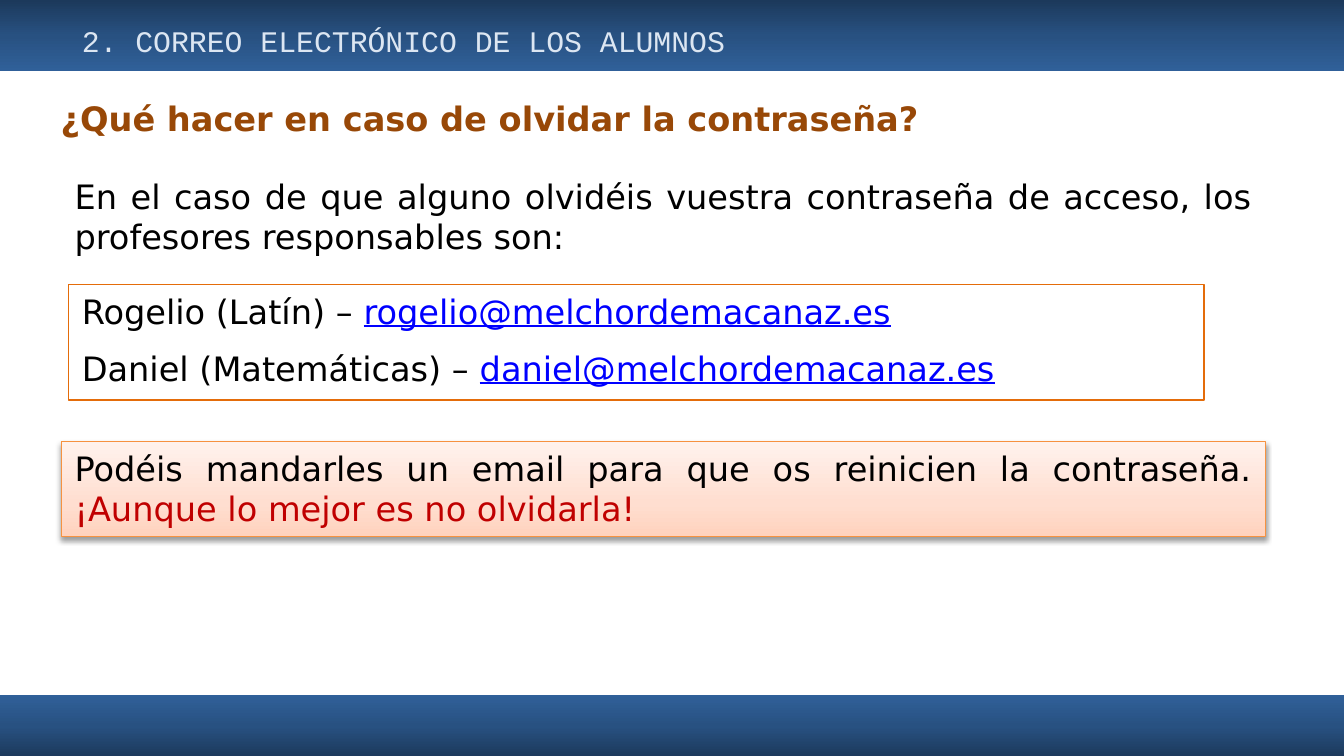
from lxml import etree
from pptx import Presentation
from pptx.dml.color import RGBColor
from pptx.enum.shapes import MSO_SHAPE
from pptx.enum.text import MSO_ANCHOR, PP_ALIGN
from pptx.oxml.ns import qn
from pptx.util import Pt

RECTANGLE = MSO_SHAPE.RECTANGLE
TOP = MSO_ANCHOR.TOP
LEFT, JUSTIFY = PP_ALIGN.LEFT, PP_ALIGN.JUSTIFY

THEME = {
    "band": [(0, "1C395B"), (50, "285181"), (100, "306099")],
    "callout": [(0, "FFD2BD"), (35, "FFDED0"), (100, "FFF2ED")],
    "callout_line": "F69240",
    "contacts_line": "E46C0A",
    "shadow": "000000",
    "paragraph_gap": 9,
    # style: font, size, colour, bold, underline
    "section": ("Courier New", 16, "DCE6F2", False, False),
    "question": ("DejaVu Sans", 18, "984807", True, False),
    "body": ("DejaVu Sans", 18, "000000", False, False),
    "email": ("DejaVu Sans", 18, "0000FF", False, True),
    "warning": ("DejaVu Sans", 18, "C00000", False, False),
}

# Each text is a list of paragraphs; each paragraph is a list of (wording, style).
SECTION = [[("2. CORREO ELECTRÓNICO DE LOS ALUMNOS", "section")]]
QUESTION = [[("¿Qué hacer en caso de olvidar la contraseña?", "question")]]
INTRO = [[("En el caso de que alguno olvidéis vuestra contraseña de acceso, "
           "los profesores responsables son:", "body")]]
TEACHERS = [
    ("Rogelio (Latín)", "rogelio@melchordemacanaz.es"),
    ("Daniel (Matemáticas)", "daniel@melchordemacanaz.es"),
]
CONTACTS = [[(f"{teacher} – ", "body"), (email, "email")] for teacher, email in TEACHERS]
ADVICE = [[("Podéis mandarles un email para que os reinicien la contraseña. ", "body"),
           ("¡Aunque lo mejor es no olvidarla!", "warning")]]

# Left, top, width, height in points
HEADER_BAND = (0, 0, 720, 38.16)
FOOTER_BAND = (0, 372.24, 720, 33.5)
SECTION_BOX = (36.72, 8.64, 360.72, 26.64)
QUESTION_BOX = (25.4, 48.96, 480.24, 29)
INTRO_BOX = (32.9, 90.72, 645.12, 51.12)
CONTACTS_BOX = (36.72, 152.4, 608.4, 61.92)
ADVICE_BOX = (32.9, 236.4, 645.12, 51.12)


def write(frame, paragraphs, align=LEFT, wrap=True):
    frame.word_wrap = wrap
    frame.vertical_anchor = TOP
    for index, runs in enumerate(paragraphs):
        paragraph = frame.add_paragraph() if index else frame.paragraphs[0]
        paragraph.alignment = align
        if index:
            paragraph.space_before = Pt(THEME["paragraph_gap"])
        for wording, style in runs:
            run = paragraph.add_run()
            run.text = wording
            name, size, colour, bold, underline = THEME[style]
            run.font.name, run.font.size = name, Pt(size)
            run.font.bold, run.font.underline = bold, underline
            run.font.color.rgb = RGBColor.from_string(colour)


def add_text(slide, box, paragraphs, **layout):
    write(slide.shapes.add_textbox(*map(Pt, box)).text_frame, paragraphs, **layout)


def add_panel(slide, box, line=None):
    panel = slide.shapes.add_shape(RECTANGLE, *map(Pt, box))
    panel.shadow.inherit = False
    panel.fill.background()
    if line:
        panel.line.color.rgb = RGBColor.from_string(line)
        panel.line.width = Pt(0.75)
    else:
        panel.line.fill.background()
    return panel


def set_gradient(panel, stops, angle):
    """Fill with any number of (percent, colour) stops; angle is counter-clockwise."""
    panel.fill.gradient()
    panel.fill.gradient_angle = angle
    stop_list = panel.fill._fill._gradFill.find(qn("a:gsLst"))
    stop_list.clear()
    for percent, colour in stops:
        stop = etree.SubElement(stop_list, qn("a:gs"), pos=str(percent * 1000))
        etree.SubElement(stop, qn("a:srgbClr"), val=colour)


def add_shadow(panel, colour, opacity, blur, distance):
    """Drop a shadow straight down."""
    effects = panel._element.spPr.find(qn("a:effectLst"))
    shadow = etree.SubElement(effects, qn("a:outerShdw"), blurRad=str(Pt(blur)),
                              dist=str(Pt(distance)), dir="5400000", rotWithShape="0")
    tint = etree.SubElement(shadow, qn("a:srgbClr"), val=colour)
    etree.SubElement(tint, qn("a:alpha"), val=str(opacity * 1000))


def main():
    deck = Presentation()
    deck.slide_width, deck.slide_height = Pt(720), Pt(405)
    slide = deck.slides.add_slide(deck.slide_layouts[6])

    for box, angle in ((HEADER_BAND, 270), (FOOTER_BAND, 90)):
        set_gradient(add_panel(slide, box), THEME["band"], angle)

    add_text(slide, SECTION_BOX, SECTION, wrap=False)
    add_text(slide, QUESTION_BOX, QUESTION)
    add_text(slide, INTRO_BOX, INTRO, align=JUSTIFY)

    contacts = add_panel(slide, CONTACTS_BOX, THEME["contacts_line"])
    write(contacts.text_frame, CONTACTS, align=JUSTIFY)

    advice = add_panel(slide, ADVICE_BOX, THEME["callout_line"])
    set_gradient(advice, THEME["callout"], 90)
    add_shadow(advice, THEME["shadow"], opacity=38, blur=3.1, distance=1.6)
    write(advice.text_frame, ADVICE, align=JUSTIFY)

    deck.save("out.pptx")


if __name__ == "__main__":
    main()
